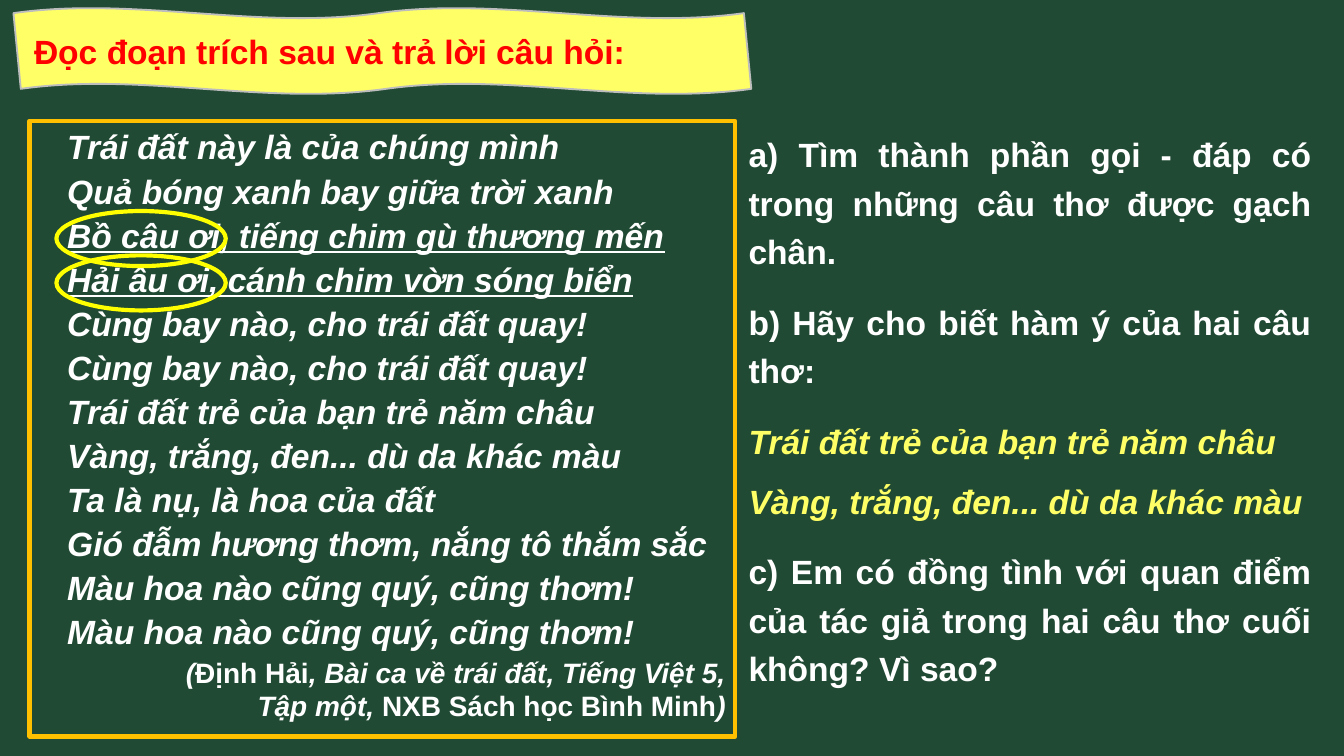
from pptx import Presentation
from pptx.dml.color import RGBColor
from pptx.enum import shapes, text
from pptx.util import Inches, Pt

WHITE, YELLOW, RED = "FFFFFF", "FFFF66", "FF0000"
JUSTIFY, RIGHT = text.PP_ALIGN.JUSTIFY, text.PP_ALIGN.RIGHT

POEM = [
    "Trái đất này là của chúng mình",
    "Quả bóng xanh bay giữa trời xanh",
    "Bồ câu ơi, tiếng chim gù thương mến",
    "Hải âu ơi, cánh chim vờn sóng biển",
    "Cùng bay nào, cho trái đất quay!",
    "Cùng bay nào, cho trái đất quay!",
    "Trái đất trẻ của bạn trẻ năm châu",
    "Vàng, trắng, đen... dù da khác màu",
    "Ta là nụ, là hoa của đất",
    "Gió đẫm hương thơm, nắng tô thắm sắc",
    "Màu hoa nào cũng quý, cũng thơm!",
    "Màu hoa nào cũng quý, cũng thơm!",
]
UNDERLINED = (2, 3)
# Each citation line alternates italic and upright pieces
CITATION = [
    ["(", "Định Hải", ", Bài ca về trái đất, Tiếng Việt 5,"],
    ["Tập một, ", "NXB Sách học Bình Minh", ")"],
]
# Text, space before, is a quoted verse
QUESTIONS = [
    ("a) Tìm thành phần gọi - đáp có trong những câu thơ được gạch chân.", 12, False),
    ("b) Hãy cho biết hàm ý của hai câu thơ:", 12, False),
    (POEM[6], 12, True),
    (POEM[7], 6, True),
    ("c) Em có đồng tình với quan điểm của tác giả trong hai câu thơ cuối không? Vì sao?",
     12, False),
]


def rgb(color):
    return RGBColor.from_string(color)


def add_shape(s, kind, box, line, width, fill=None):
    sp = s.shapes.add_shape(kind, *map(Inches, box))
    sp.shadow.inherit = False
    if fill:
        sp.fill.solid()
        sp.fill.fore_color.rgb = rgb(fill)
    else:
        sp.fill.background()
    sp.line.color.rgb = rgb(line)
    sp.line.width = Pt(width)
    return sp


def set_frame(tf, left=0.07, anchor=text.MSO_ANCHOR.TOP):
    tf.word_wrap = True
    tf.vertical_anchor = anchor
    tf.margin_left, tf.margin_right = Inches(left), Inches(0.07)
    tf.margin_top = tf.margin_bottom = Inches(0.04)


def add_paragraph(tf, align=JUSTIFY, before=0, after=0, spacing=None):
    first = tf.paragraphs[0]
    p = tf.add_paragraph() if first.runs else first
    p.alignment = align
    p.space_before, p.space_after = Pt(before), Pt(after)
    if spacing:
        p.line_spacing = spacing
    return p


def add_text(p, words, size=18, color=WHITE, italic=False, underline=False):
    r = p.add_run()
    r.text = words
    r.font.name, r.font.size, r.font.bold = "Arial", Pt(size), True
    r.font.italic, r.font.underline = italic, underline
    r.font.color.rgb = rgb(color)


def add_poem(s):
    sp = add_shape(s, shapes.MSO_SHAPE.RECTANGLE, (0.22, 0.9, 5.25, 4.58), "FFC000", 2.25)
    tf = sp.text_frame
    set_frame(tf, left=0.28)
    for i, verse in enumerate(POEM):
        add_text(add_paragraph(tf, before=2), verse, italic=True, underline=i in UNDERLINED)
    for i, pieces in enumerate(CITATION):
        p = add_paragraph(tf, RIGHT, before=0 if i else 2)
        for j, words in enumerate(pieces):
            add_text(p, words, size=15, italic=j % 2 == 0)


def add_questions(s):
    tf = s.shapes.add_textbox(*map(Inches, (5.5, 0.9, 4.33, 4.3))).text_frame
    set_frame(tf)
    for words, before, verse in QUESTIONS:
        p = add_paragraph(tf, before=before, spacing=1.2)
        add_text(p, words, color=YELLOW if verse else WHITE, italic=verse)


def add_heading(s):
    sp = add_shape(s, shapes.MSO_SHAPE.DOUBLE_WAVE, (0.1, 0.06, 5.49, 0.64),
                   "BDBDBD", 1, YELLOW)
    sp.adjustments[0], sp.adjustments[1] = 0.06, 0.005
    set_frame(sp.text_frame, left=0.1, anchor=text.MSO_ANCHOR.MIDDLE)
    add_text(add_paragraph(sp.text_frame, after=3),
             "Đọc đoạn trích sau và trả lời câu hỏi:", color=RED)


def main():
    prs = Presentation()
    # Widescreen, 16:9
    prs.slide_width, prs.slide_height = Inches(10), Inches(10 * 9 / 16)
    s = prs.slides.add_slide(prs.slide_layouts[6])
    s.background.fill.solid()
    s.background.fill.fore_color.rgb = rgb("214A34")

    add_poem(s)
    add_questions(s)
    # Rings around the two forms of address, the first behind the heading
    ring_tops = (1.57, 1.9)
    add_ring(s, ring_tops[0])
    add_heading(s)
    add_ring(s, ring_tops[1])

    prs.save("out.pptx")


def add_ring(s, top):
    add_shape(s, shapes.MSO_SHAPE.OVAL, (0.42, top, 1.26, 0.41), "FFFF00", 2.25)


if __name__ == "__main__":
    main()
